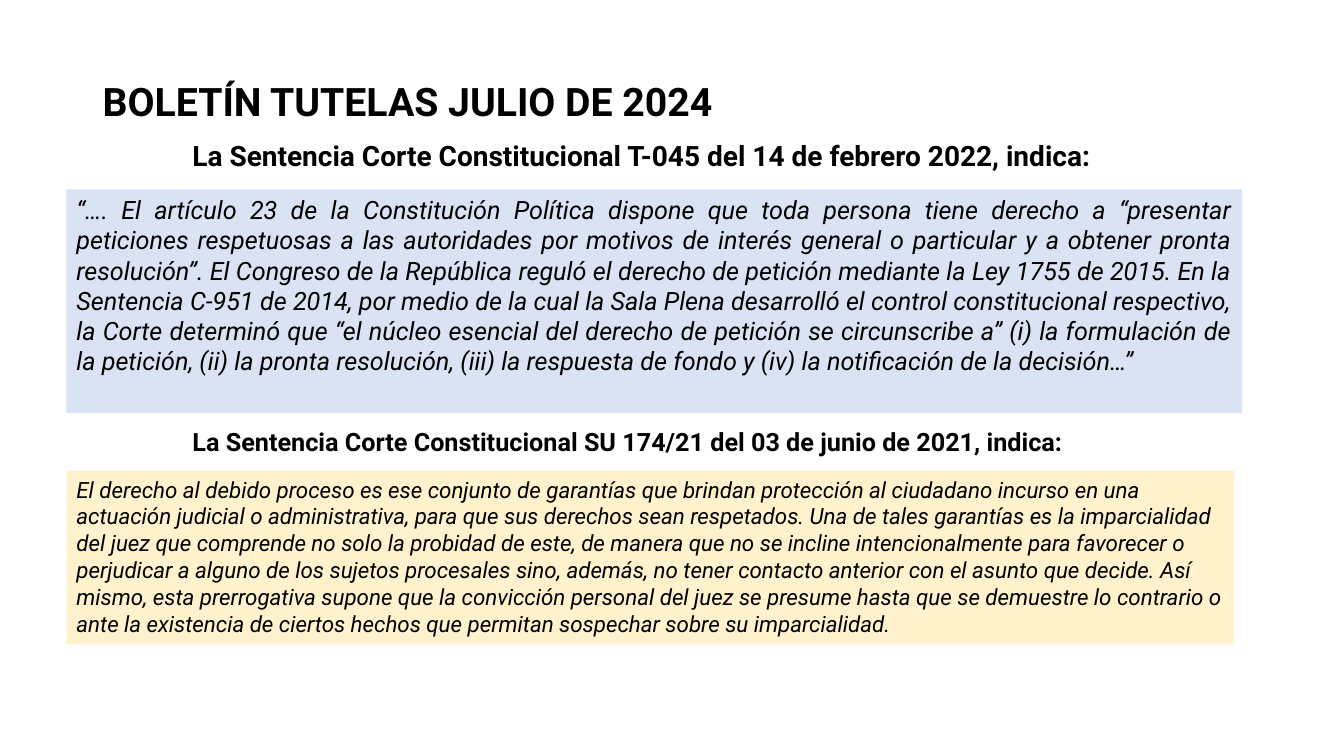
from pptx import Presentation
from pptx.dml.color import RGBColor
from pptx.enum.shapes import MSO_SHAPE
from pptx.enum.text import MSO_ANCHOR, PP_ALIGN
from pptx.util import Inches, Pt

BLACK = RGBColor(0x00, 0x00, 0x00)
BLUE = RGBColor(0xDA, 0xE3, 0xF3)
CREAM = RGBColor(0xFF, 0xF2, 0xCC)

TITLE = "BOLETÍN TUTELAS JULIO DE 2024"
RULING = "La Sentencia Corte Constitucional {}, indica:"
RIGHTS = (
    "“…. El artículo 23 de la Constitución Política dispone que toda persona "
    "tiene derecho a “presentar peticiones respetuosas a las autoridades por "
    "motivos de interés general o particular y a obtener pronta resolución”. "
    "El Congreso de la República reguló el derecho de petición mediante la Ley "
    "1755 de 2015. En la Sentencia C-951 de 2014, por medio de la cual la Sala "
    "Plena desarrolló el control constitucional respectivo, la Corte determinó "
    "que “el núcleo esencial del derecho de petición se circunscribe a” (i) la "
    "formulación de la petición, (ii) la pronta resolución, (iii) la respuesta "
    "de fondo y (iv) la notificación de la decisión…”"
)
PROCESS = (
    "El derecho al debido proceso es ese conjunto de garantías que brindan "
    "protección al ciudadano incurso en una actuación judicial o "
    "administrativa, para que sus derechos sean respetados. Una de tales "
    "garantías es la imparcialidad del juez que comprende no solo la probidad "
    "de este, de manera que no se incline intencionalmente para favorecer o "
    "perjudicar a alguno de los sujetos procesales sino, además, no tener "
    "contacto anterior con el asunto que decide. Así mismo, esta prerrogativa "
    "supone que la convicción personal del juez se presume hasta que se "
    "demuestre lo contrario o ante la existencia de ciertos hechos que "
    "permitan sospechar sobre su imparcialidad."
)


class Bulletin:
    style = {"name": "Roboto", "bold": False, "italic": False}

    def __init__(self, deck):
        self.slide = deck.slides.add_slide(deck.slide_layouts[6])

    def label(self, shape, text, size, align=PP_ALIGN.LEFT, **extra):
        frame = shape.text_frame
        frame.word_wrap = True
        frame.vertical_anchor = MSO_ANCHOR.TOP
        line = frame.paragraphs[0]
        line.alignment = align
        run = line.add_run()
        run.text = text
        for key, value in {**self.style, "size": Pt(size), **extra}.items():
            setattr(run.font, key, value)
        run.font.color.rgb = BLACK
        return line

    def heading(self, box, text, size, indent=0):
        shape = self.slide.shapes.add_textbox(*map(Inches, box))
        line = self.label(shape, text, size, bold=True)
        if indent:
            props = line._p.get_or_add_pPr()
            props.set("marL", str(Inches(indent)))
            props.set("indent", "0")

    def panel(self, box, text, size, fill, align=PP_ALIGN.LEFT):
        shape = self.slide.shapes.add_shape(MSO_SHAPE.RECTANGLE, *map(Inches, box))
        shape.shadow.inherit = False
        shape.fill.solid()
        shape.fill.fore_color.rgb = fill
        shape.line.fill.background()
        self.label(shape, text, size, align, italic=True)


def main():
    deck = Presentation()
    deck.slide_width, deck.slide_height = Inches(13.33), Inches(7.5)
    page = Bulletin(deck)
    page.heading((0.42, 0.72, 11.07, 0.57), TITLE, 28, indent=0.5)
    page.heading((1.81, 1.33, 10.06, 0.44),
                 RULING.format("T-045 del 14 de febrero 2022"), 20)
    page.panel((0.66, 1.88, 11.66, 2.22), RIGHTS, 18, BLUE, PP_ALIGN.JUSTIFY)
    page.heading((1.81, 4.18, 10.38, 0.4),
                 RULING.format("SU 174/21 del 03 de junio de 2021"), 18)
    page.panel((0.66, 4.67, 11.58, 1.72), PROCESS, 16, CREAM)
    deck.save("out.pptx")


if __name__ == "__main__":
    main()
